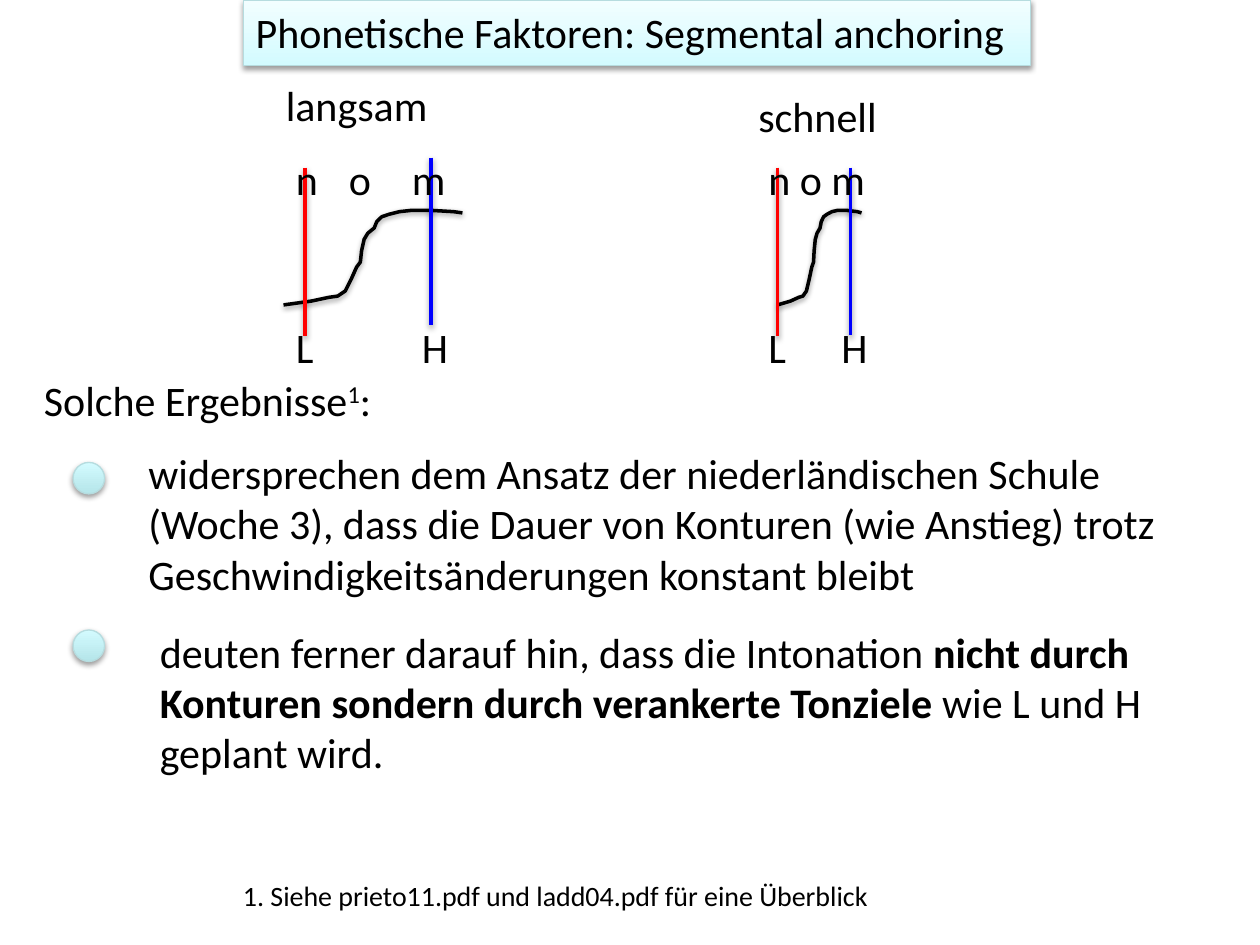
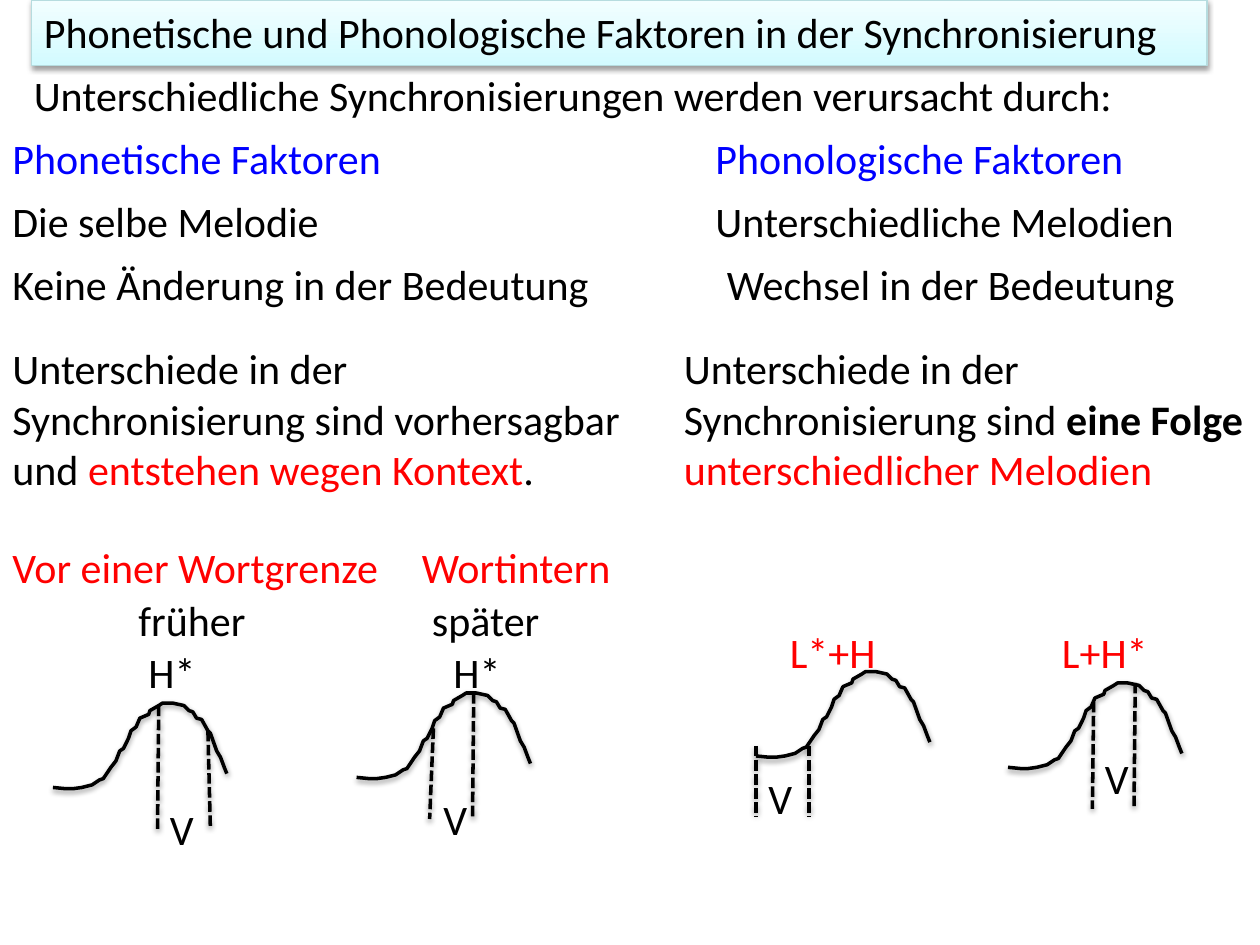
from lxml import etree
from pptx import Presentation
from pptx.dml.color import RGBColor
from pptx.enum.dml import MSO_LINE
from pptx.enum.shapes import MSO_CONNECTOR, MSO_SHAPE
from pptx.enum.text import MSO_ANCHOR, MSO_AUTO_SIZE, PP_ALIGN
from pptx.oxml.ns import qn
from pptx.util import Inches, Pt

RECT, OVAL = MSO_SHAPE.RECTANGLE, MSO_SHAPE.OVAL
STRAIGHT, DASH = MSO_CONNECTOR.STRAIGHT, MSO_LINE.SQUARE_DOT
TOP, LEFT, FIXED = MSO_ANCHOR.TOP, PP_ALIGN.LEFT, MSO_AUTO_SIZE.NONE

THEME = {
    "font": "Calibri", "body": 24, "small": 16,
    "black": "000000", "red": "FF0000", "blue": "0000FF", "edge": "B6DCDF",
    "band": ("D3FBFF", "F2FEFF"), "dot": ("B5E5E9", "D3FBFF"),
    "thick": 2, "thin": 0.75,
}
FRAME = {"word_wrap": True, "auto_size": FIXED, "vertical_anchor": TOP}

RISE = [(0, .75), (.22, .72), (.36, .69), (.43, .68), (.49, .64), (.54, .54),
        (.58, .45), (.61, .41), (.62, .32), (.64, .23), (.67, .18), (.72, .14),
        (.74, .09), (.78, .05), (.84, .03), (.92, .01), (1.01, 0), (1.18, 0),
        (1.35, .01), (1.42, .02)]
PEAK = [(0, .67), (.1, .68), (.16, .68), (.23, .67), (.31, .65), (.37, .61),
        (.4, .6), (.44, .54), (.46, .51), (.5, .46), (.53, .38), (.56, .36),
        (.6, .28), (.62, .22), (.66, .19), (.69, .12), (.76, .09), (.77, .06),
        (.84, .02), (.87, 0), (.95, 0), (1.04, .02), (1.08, .06), (1.11, .07),
        (1.14, .12), (1.18, .13), (1.23, .22), (1.25, .24), (1.3, .38),
        (1.33, .43), (1.36, .51), (1.38, .56)]


def dress(shape, color, width, fill=None):
    shape.line.color.rgb = RGBColor.from_string(THEME[color])
    shape.line.width = Pt(THEME[width])
    if fill:
        shape.fill.gradient()
        shape.fill.gradient_angle = 90
        for stop, tone in zip(shape.fill.gradient_stops, THEME[fill]):
            stop.color.rgb = RGBColor.from_string(tone)
    props = shape._element.spPr
    for old in props.findall(qn("a:effectLst")):
        props.remove(old)
    glow = etree.SubElement(props, qn("a:effectLst"))
    shade = etree.SubElement(glow, qn("a:outerShdw"), blurRad="40000",
                             dist="20000", dir="5400000", rotWithShape="0")
    tone = etree.SubElement(shade, qn("a:srgbClr"), val=THEME["black"])
    etree.SubElement(tone, qn("a:alpha"), val="38000")


def write(shape, parts, color="black", size="body"):
    frame = shape.text_frame
    for key, value in FRAME.items():
        setattr(frame, key, value)
    para = frame.paragraphs[0]
    para.alignment = LEFT
    for text, look in [(parts, {})] if isinstance(parts, str) else parts:
        run = para.add_run()
        run.text = text
        style = {"name": THEME["font"], "size": Pt(THEME[size]),
                 "bold": look.get("bold", False)}
        for key, value in style.items():
            setattr(run.font, key, value)
        run.font.color.rgb = RGBColor.from_string(THEME[look.get("color", color)])
        if "base" in look:
            run._r.get_or_add_rPr().set("baseline", look["base"])


RED, BOLD = {"color": "red"}, {"bold": True}

anchor = {
    "title": (1.93, 6.25, "Phonetische Faktoren: Segmental anchoring"),
    "curves": [(RISE, 2.25, 1.67, 1), (RISE, 6.17, 1.67, .47)],
    "lines": [(2.42, 1.33, 2.42, 2.67, "red"), (3.42, 1.25, 3.42, 2.58, "blue"),
              (6.17, 1.33, 6.17, 2.67, "red"), (6.75, 1.33, 6.75, 2.66, "blue")],
    "dots": [(.58, 3.67), (.58, 5)],
    "texts": [
        (2.17, .58, 1.5, "langsam"),
        (5.92, .67, 1.5, "schnell"),
        (.25, 2.92, 4.83, [("Solche Ergebnisse", {}), ("1", {"base": "30000"}),
                           (":", {})]),
        (1.08, 3.5, 8.5, "widersprechen dem Ansatz der niederländischen Schule "
         "(Woche 3), dass die Dauer von Konturen (wie Anstieg) trotz "
         "Geschwindigkeitsänderungen konstant bleibt"),
        (1.17, 4.92, 8, [
            ("deuten ferner darauf hin, dass die Intonation ", {}),
            ("nicht durch Konturen sondern durch verankerte Tonziele", BOLD),
            (" wie L und H geplant wird.", {})]),
        (1.83, 6.92, 5.75, "1. Siehe prieto11.pdf und ladd04.pdf für eine Überblick",
         "black", "small"),
    ],
}
for left, mid, last, high in [(2.25, 2.67, 3.17, 3.25), (6, 6.25, 6.5, 6.58)]:
    anchor["texts"] += [(left, 1.17, .5, "n"), (mid, 1.17, .42, "o"),
                        (last, 1.17, .5, "m"), (left, 2.5, .42, "L"),
                        (high, 2.5, .42, "H")]

timing = {
    "title": (.25, 9.33,
              "Phonetische und Phonologische Faktoren in der Synchronisierung"),
    "curves": [(PEAK, .42, 5.58, 1), (PEAK, 2.83, 5.5, 1),
               (PEAK, 6, 5.33, 1), (PEAK, 8, 5.42, 1)],
    "lines": [(1.26, 5.6, 1.25, 6.59, "black"), (1.65, 5.8, 1.67, 6.58, "black"),
              (3.44, 5.78, 3.41, 6.5, "black"), (3.76, 5.5, 3.75, 6.5, "black"),
              (6, 5.92, 6, 6.48, "black"), (6.42, 5.92, 6.42, 6.48, "black"),
              (8.68, 5.57, 8.67, 6.42, "black"), (9.01, 5.42, 9, 6.42, "black")],
    "dots": [],
    "texts": [
        (.17, .5, 9, "Unterschiedliche Synchronisierungen werden verursacht durch:"),
        (0, 1, 3.33, "Phonetische Faktoren", "blue"),
        (5.58, 1, 4.17, "Phonologische Faktoren", "blue"),
        (0, 1.5, 2.83, "Die selbe Melodie"),
        (5.58, 1.5, 4.33, "Unterschiedliche Melodien"),
        (0, 2, 4.83, "Keine Änderung in der Bedeutung"),
        (5.67, 2, 4.17, "Wechsel in der Bedeutung"),
        (0, 2.67, 5.25, [
            ("Unterschiede in der Synchronisierung sind vorhersagbar und ", {}),
            ("entstehen wegen Kontext", RED), (".", {})]),
        (5.33, 2.67, 4.67, [
            ("Unterschiede in der Synchronisierung sind ", {}),
            ("eine Folge ", BOLD), ("unterschiedlicher Melodien", RED)]),
        (0, 4.25, 3.25, "Vor einer Wortgrenze", "red"),
        (3.25, 4.25, 1.92, "Wortintern", "red"),
        (1, 4.67, 1.17, "früher"),
        (3.33, 4.67, 1.27, "später"),
        (1.08, 5.08, .75, "H*"),
        (3.5, 5.08, .75, "H*"),
        (6.17, 4.92, 1.08, "L*+H", "red"),
        (8.33, 4.92, 1.08, "L+H*", "red"),
        (1.25, 6.33, .42, "V"),
        (3.42, 6.25, .42, "V"),
        (6, 6.08, .42, "V"),
        (8.67, 5.92, .42, "V"),
    ],
}

deck = Presentation()
deck.slide_width, deck.slide_height = Inches(10), Inches(7.5)

for page in (anchor, timing):
    shapes = deck.slides.add_slide(deck.slide_layouts[6]).shapes

    for curve, left, top, stretch in page["curves"]:
        points = [(Inches(left + x * stretch), Inches(top + y)) for x, y in curve]
        pen = shapes.build_freeform(*points[0])
        pen.add_line_segments(points[1:], close=False)
        trace = pen.convert_to_shape()
        trace.fill.background()
        dress(trace, "black", "thick")

    for *ends, color in page["lines"]:
        line = shapes.add_connector(STRAIGHT, *map(Inches, ends))
        if color == "black":
            line.line.dash_style = DASH
        dress(line, color, "thick")

    for left, top in page["dots"]:
        dot = shapes.add_shape(OVAL, *map(Inches, (left, top, .25, .25)))
        dress(dot, "edge", "thin", "dot")

    for left, top, width, parts, *look in page["texts"]:
        height = .5 if isinstance(parts, str) and len(parts) < 90 else 1.31
        box = shapes.add_textbox(*map(Inches, (left, top, width, height)))
        write(box, parts, *look)

    left, width, text = page["title"]
    band = shapes.add_shape(RECT, *map(Inches, (left, 0, width, .52)))
    dress(band, "edge", "thin", "band")
    write(band, text)

deck.save("out.pptx")
